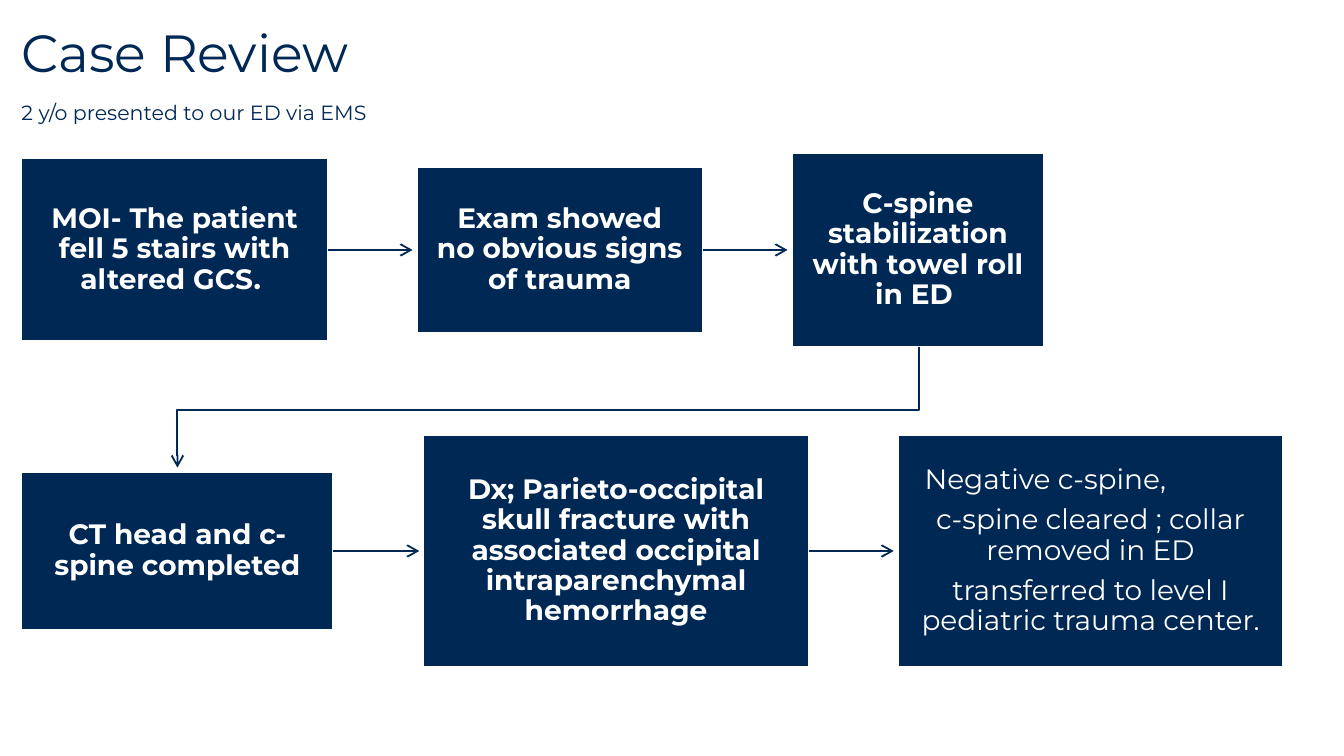
from itertools import pairwise
from lxml.etree import SubElement
from pptx import Presentation
from pptx.dml.color import RGBColor
from pptx.enum.shapes import MSO_CONNECTOR as Connector, MSO_SHAPE as Shape
from pptx.enum.text import MSO_ANCHOR as Anchor, PP_ALIGN as Align
from pptx.oxml.ns import qn
from pptx.util import Inches, Pt

NAVY = "002855"
WHITE = "FFFFFF"
FONT = "Montserrat"
ARROW_GAP = 0.03

TOP_ROW = [
    (0.16, 2.28, 1.36, ["MOI- The patient fell 5 stairs with altered GCS. "]),
    (3.1, 2.13, 1.23, ["Exam showed no obvious signs of trauma"]),
    (5.89, 1.88, 1.44, ["C-spine stabilization with towel roll in ED "]),
]
BOTTOM_ROW = [
    (0.16, 2.32, 1.17, ["CT head and c-spine completed"]),
    (3.15, 2.87, 1.72, ["Dx; Parieto-occipital skull fracture with associated "
                        "occipital intraparenchymal hemorrhage"]),
    (6.68, 2.87, 1.72, ["Negative c-spine,",
                        "c-spine cleared ; collar removed in ED",
                        "transferred to level I pediatric trauma center."]),
]


def color(value):
    return RGBColor.from_string(value)


def add_text(frame, text, size, fill, bold=False, align=Align.LEFT,
             line_spacing=None, before=0, after=0, indent=0):
    paragraph = frame.paragraphs[0]
    if paragraph.runs:
        paragraph = frame.add_paragraph()
        paragraph.space_before = Pt(before)
    paragraph.text = text
    paragraph.alignment = align
    paragraph.line_spacing = line_spacing
    paragraph.space_after = Pt(after)
    properties = paragraph._p.get_or_add_pPr()
    properties.set("marL", str(Inches(indent)))
    properties.set("indent", "0")
    font = paragraph.font
    font.name, font.size, font.bold = FONT, Pt(size), bold
    font.color.rgb = color(fill)


def style_arrow(line):
    line.color.rgb = color(NAVY)
    line.width = Pt(1)
    SubElement(line._get_or_add_ln(), qn("a:tailEnd"), type="arrow")


def add_arrow(slide, left, right, y):
    connector = slide.shapes.add_connector(
        Connector.STRAIGHT, Inches(left), Inches(y), Inches(right), Inches(y))
    style_arrow(connector.line)
    SubElement(connector._element.spPr, qn("a:effectLst"))


def add_row_link(slide, start, turn_y, end):
    builder = slide.shapes.build_freeform(Inches(start[0]), Inches(start[1]))
    corners = [(start[0], turn_y), (end[0], turn_y), end]
    builder.add_line_segments(
        [(Inches(x), Inches(y)) for x, y in corners], close=False)
    link = builder.convert_to_shape()
    link.shadow.inherit = False
    link.fill.background()
    style_arrow(link.line)


def add_step(slide, left, top, width, height, texts):
    box = slide.shapes.add_shape(
        Shape.RECTANGLE, Inches(left), Inches(top), Inches(width), Inches(height))
    box.shadow.inherit = False
    box.fill.solid()
    box.fill.fore_color.rgb = color(NAVY)
    box.line.color.rgb = color(WHITE)
    box.line.width = Pt(1)
    frame = box.text_frame
    frame.word_wrap = True
    frame.vertical_anchor = Anchor.MIDDLE
    frame.margin_left = frame.margin_right = Inches(0.14)
    frame.margin_top = frame.margin_bottom = Inches(0.15)
    is_list = len(texts) > 1
    for index, text in enumerate(texts):
        is_lead = is_list and index == 0
        add_text(frame, text, 15, WHITE, bold=not is_list,
                 align=Align.LEFT if is_lead else Align.CENTER,
                 line_spacing=0.9, after=5.25, indent=0.06 if is_lead else 0)


def add_row(slide, center_y, steps):
    for left, width, height, texts in steps:
        add_step(slide, left, center_y - height / 2, width, height, texts)
    for (left, width, *_), (next_left, *_) in pairwise(steps):
        add_arrow(slide, left + width, next_left - ARROW_GAP, center_y)


def add_heading(slide, left, top, width, height):
    box = slide.shapes.add_textbox(
        Inches(left), Inches(top), Inches(width), Inches(height))
    frame = box.text_frame
    frame.word_wrap = True
    frame.margin_left = frame.margin_right = 0
    frame.margin_top = frame.margin_bottom = 0
    add_text(frame, "Case Review", 28, NAVY)
    add_text(frame, "2 y/o presented to our ED via EMS", 11, NAVY, before=9)


def main():
    presentation = Presentation()
    presentation.slide_width = Inches(10)
    presentation.slide_height = presentation.slide_width * 9 // 16
    slide = presentation.slides.add_slide(presentation.slide_layouts[6])
    add_row(slide, 1.86, TOP_ROW)
    add_row_link(slide, (6.84, 2.58), 3.05, (1.32, 3.48))
    add_row(slide, 4.1, BOTTOM_ROW)
    add_heading(slide, 0.16, 0.15, 4.55, 0.51)
    presentation.save("out.pptx")


if __name__ == "__main__":
    main()
